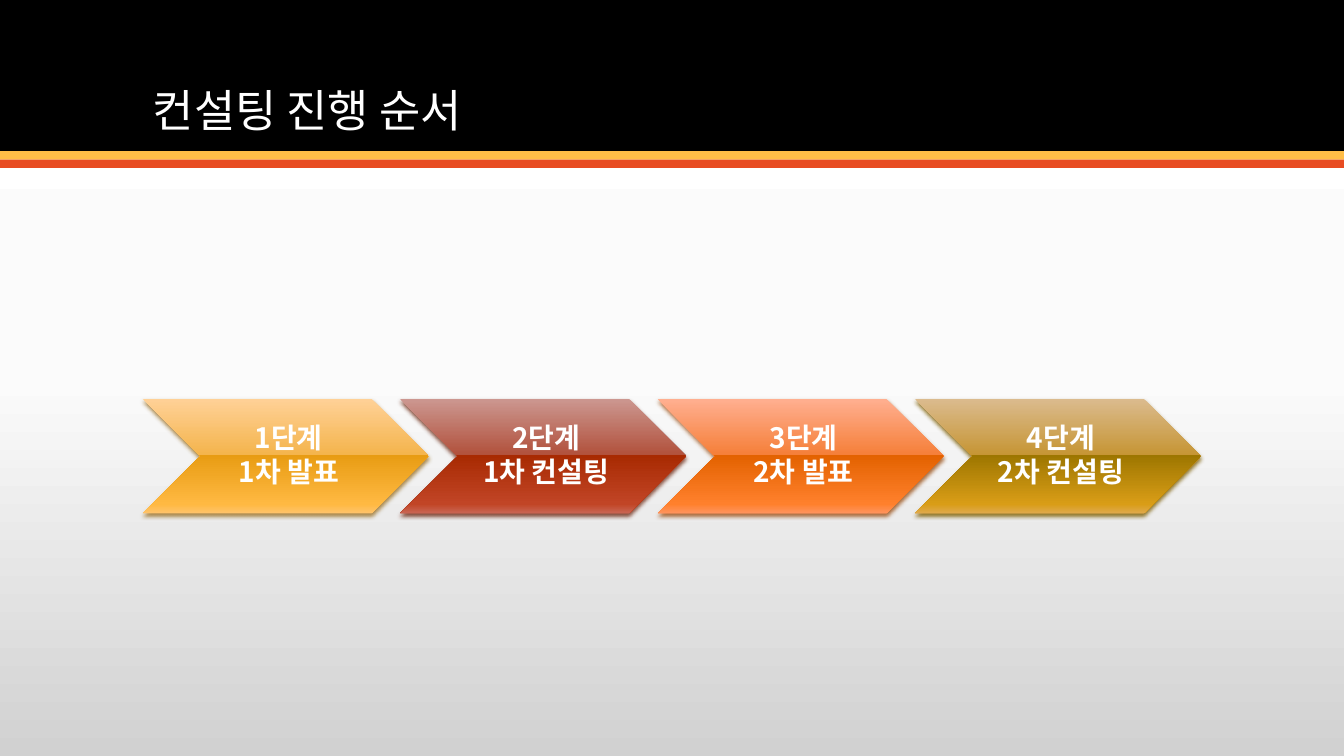
import pptx
import pptx.dml.color
import pptx.enum.shapes
import pptx.enum.text
import pptx.oxml.ns
import pptx.util
from lxml import etree

Pt = pptx.util.Pt
qn = pptx.oxml.ns.qn
FONT = "Noto Sans CJK KR"
WIDTH, HEIGHT = 960, 540
MARGIN = 102
CONTENT_WIDTH = WIDTH - 2 * MARGIN

BACKGROUND_STOPS = [(0, "FFFFFF"), (50, "FBFBFB"), (100, "D1D1D1")]
STOP_POSITIONS = (0, 49, 49, 92, 100)
# Text lines, gradient colours, shadow colour
STEPS = [
    (("1단계", "1차 발표"), ("FFD197", "F4B44C", "E89C13", "FFB942", "FFC36A"), "9D752C"),
    (("2단계", "1차 컨설팅"), ("CC9790", "B1513C", "A82A02", "C14526", "C96654"), "702D17"),
    (("3단계", "2차 발표"), ("FFAF90", "F57F39", "E36200", "FF802C", "FF945E"), "9D5218"),
    (("4단계", "2차 컨설팅"), ("DBBB8E", "C69534", "9D7600", "D99D17", "DFA94C"), "7E5E00"),
]


def color(value):
    return pptx.dml.color.RGBColor.from_string(value)


def apply_format(target, values):
    for name, value in values.items():
        setattr(target, name, value)


def add_color_element(parent, value):
    return etree.SubElement(parent, qn("a:srgbClr"), val=value)


def set_gradient(fill, owner, stops):
    """Fill from top to bottom with (percent, colour) stops."""
    fill.gradient()
    fill.gradient_angle = 270
    stop_list = owner.find(".//" + qn("a:gsLst"))
    for old_stop in list(stop_list):
        stop_list.remove(old_stop)
    for position, value in stops:
        stop = etree.SubElement(stop_list, qn("a:gs"), pos=str(position * 1000))
        add_color_element(stop, value)


def add_shadow(shape, value):
    shape.shadow.inherit = False
    effects = shape._element.spPr.find(qn("a:effectLst"))
    shadow = etree.SubElement(
        effects, qn("a:outerShdw"), blurRad=str(Pt(3.1)), dist=str(Pt(2)),
        dir="5400000", algn="ctr", rotWithShape="0")
    etree.SubElement(add_color_element(shadow, value), qn("a:alpha"), val="83000")


def write_lines(frame, lines, frame_format, paragraph_format, font_format):
    apply_format(frame, frame_format)
    for index, line in enumerate(lines):
        paragraph = frame.paragraphs[0] if index == 0 else frame.add_paragraph()
        apply_format(paragraph, paragraph_format)
        run = paragraph.add_run()
        run.text = line
        run.font.color.rgb = color("FFFFFF")
        apply_format(run.font, {"name": FONT, **font_format})
        etree.SubElement(run._r.get_or_add_rPr(), qn("a:ea"), typeface=FONT)


def add_header(slide, left, top, width, height, text):
    # Black band with two stripes under it
    stripe = 6
    bands = [(0, height, "000000"), (height, stripe, "FFBD47"),
             (height + stripe, stripe, "E84C22")]
    for offset, band_height, value in bands:
        band = slide.shapes.add_shape(
            pptx.enum.shapes.MSO_SHAPE.RECTANGLE,
            Pt(left), Pt(top + offset), Pt(width), Pt(band_height))
        band.shadow.inherit = False
        band.fill.solid()
        band.fill.fore_color.rgb = color(value)
        band.line.fill.background()

    # Title, brought in front of the band
    title = slide.shapes.title
    apply_format(title, {
        "left": Pt(left + MARGIN), "top": Pt(top + 20),
        "width": Pt(width - 2 * MARGIN), "height": Pt(81.4)})
    slide.shapes._spTree.append(title._element)
    write_lines(
        title.text_frame, [text],
        {"vertical_anchor": pptx.enum.text.MSO_ANCHOR.BOTTOM, "word_wrap": True},
        {"alignment": pptx.enum.text.PP_ALIGN.LEFT, "line_spacing": 0.9},
        {"size": Pt(32)})


def add_process(slide, left, top, width, steps):
    # Each chevron overlaps the next by a tenth of its width
    step_width = width / (0.9 * (len(steps) - 1) + 1)
    step_height = 0.4 * step_width
    for index, (lines, colors, shadow_color) in enumerate(steps):
        chevron = slide.shapes.add_shape(
            pptx.enum.shapes.MSO_SHAPE.CHEVRON,
            Pt(left + index * 0.9 * step_width), Pt(top),
            Pt(step_width), Pt(step_height))
        set_gradient(chevron.fill, chevron._element, zip(STOP_POSITIONS, colors))
        chevron.line.fill.background()
        add_shadow(chevron, shadow_color)
        write_lines(
            chevron.text_frame, lines,
            {"vertical_anchor": pptx.enum.text.MSO_ANCHOR.MIDDLE, "word_wrap": True,
             "margin_left": Pt(6.3), "margin_top": Pt(2.1),
             "margin_right": Pt(2.1), "margin_bottom": Pt(2.1)},
            {"alignment": pptx.enum.text.PP_ALIGN.CENTER, "line_spacing": 0.9,
             "space_after": Pt(2.5)},
            {"size": Pt(20), "bold": True})


def main():
    presentation = pptx.Presentation()
    presentation.slide_width, presentation.slide_height = Pt(WIDTH), Pt(HEIGHT)
    slide = presentation.slides.add_slide(presentation.slide_layouts[5])
    set_gradient(slide.background.fill, slide._element, BACKGROUND_STOPS)
    add_header(slide, 0, 0, WIDTH, 108, "컨설팅 진행 순서")
    add_process(slide, MARGIN, 285, CONTENT_WIDTH, STEPS)
    presentation.save("out.pptx")


if __name__ == "__main__":
    main()
